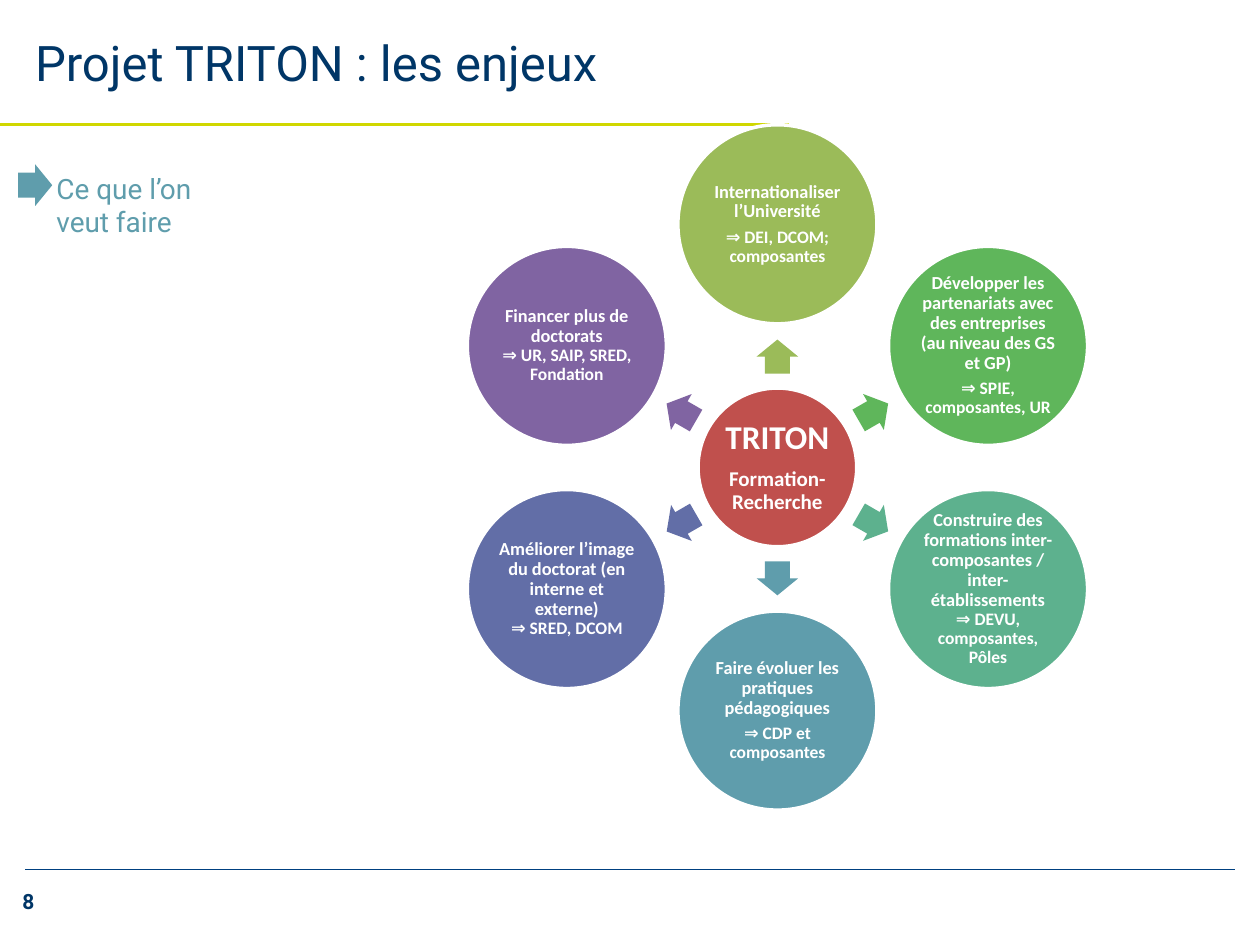
from math import cos, radians, sin

from lxml.etree import SubElement
from pptx import Presentation
from pptx.dml.color import RGBColor
from pptx.enum.shapes import MSO_CONNECTOR, MSO_SHAPE
from pptx.enum.text import MSO_ANCHOR, PP_ALIGN
from pptx.oxml.ns import qn
from pptx.util import Inches, Pt

WHITE = RGBColor(0xFF, 0xFF, 0xFF)
NAVY = RGBColor(0x00, 0x36, 0x67)
FOOTER_BLUE = RGBColor(0x00, 0x40, 0x80)
LIME = RGBColor(0xD0, 0xD7, 0x00)
RED = RGBColor(0xC0, 0x50, 0x4D)
OLIVE = RGBColor(0x9B, 0xBB, 0x59)
GREEN = RGBColor(0x5F, 0xB6, 0x5B)
MINT = RGBColor(0x5D, 0xB1, 0x8E)
TEAL = RGBColor(0x5F, 0x9D, 0xAC)
INDIGO = RGBColor(0x62, 0x6E, 0xA7)
PURPLE = RGBColor(0x80, 0x64, 0xA2)

TITLE = "Projet TRITON : les enjeux"
SUBTITLE = "Ce que l’on veut faire"
PAGE_NUMBER = "8"
HUB = [("TRITON", 19), ("Formation-Recherche", 12)]
PARAGRAPH, LINE_BREAK = "paragraph", "line break"
GOALS = [
    ("Internationaliser l’Université", PARAGRAPH, "⇒ DEI, DCOM; composantes", OLIVE),
    ("Développer les partenariats avec des entreprises (au niveau des GS et GP)",
     PARAGRAPH, "⇒ SPIE, composantes, UR", GREEN),
    ("Construire des formations inter-composantes / inter-établissements",
     LINE_BREAK, "⇒ DEVU, composantes, Pôles", MINT),
    ("Faire évoluer les pratiques pédagogiques", PARAGRAPH, "⇒ CDP et composantes", TEAL),
    ("Améliorer l’image du doctorat (en interne et externe)",
     LINE_BREAK, "⇒ SRED, DCOM", INDIGO),
    ("Financer plus de doctorats", LINE_BREAK, "⇒ UR, SAIP, SRED, Fondation", PURPLE),
]
GOAL_SIZE, ACTORS_SIZE = 10.5, 10

CENTER_X, CENTER_Y = 6.17, 3.71
HUB_DIAMETER, GOAL_DIAMETER = 1.26, 1.58
GOAL_RADIUS, ARROW_RADIUS = 1.93, 0.88
ARROW_WIDTH, ARROW_HEIGHT = 0.27, 0.33

presentation = Presentation()
presentation.slide_width, presentation.slide_height = Inches(10), Inches(7.5)
slide = presentation.slides.add_slide(presentation.slide_layouts[6])


def add_run(paragraph, text, size, font_name, color, bold=False):
    run = paragraph.add_run()
    run.text = text
    run.font.size = Pt(size)
    run.font.name = font_name
    run.font.color.rgb = color
    run.font.bold = bold


def add_rule(left, right, y, color, width):
    rule = slide.shapes.add_connector(
        MSO_CONNECTOR.STRAIGHT, Inches(left), Inches(y), Inches(right), Inches(y))
    rule.line.color.rgb = color
    rule.line.width = Pt(width)
    SubElement(rule._element.spPr, qn("a:effectLst"))


def add_label(left, top, width, height, text, size, color, bold=False, anchor=MSO_ANCHOR.TOP):
    label = slide.shapes.add_textbox(Inches(left), Inches(top), Inches(width), Inches(height))
    label.text_frame.word_wrap = True
    label.text_frame.vertical_anchor = anchor
    add_run(label.text_frame.paragraphs[0], text, size, "Roboto", color, bold)


def add_centered(kind, x, y, width, height, color):
    shape = slide.shapes.add_shape(
        kind, Inches(x - width / 2), Inches(y - height / 2), Inches(width), Inches(height))
    shape.shadow.inherit = False
    shape.fill.solid()
    shape.fill.fore_color.rgb = color
    return shape


def add_arrow(x, y, color, angle=0):
    arrow = add_centered(MSO_SHAPE.RIGHT_ARROW, x, y, ARROW_WIDTH, ARROW_HEIGHT, color)
    arrow.adjustments[0], arrow.adjustments[1] = 0.6, 0.5
    arrow.rotation = angle % 360
    arrow.line.fill.background()


def add_circle(x, y, diameter, color, paragraphs, margin):
    circle = add_centered(MSO_SHAPE.OVAL, x, y, diameter, diameter, color)
    circle.line.color.rgb = WHITE
    circle.line.width = Pt(2)
    frame = circle.text_frame
    frame.word_wrap = True
    frame.vertical_anchor = MSO_ANCHOR.MIDDLE
    frame.margin_left = frame.margin_right = Inches(margin)
    frame.margin_top = frame.margin_bottom = Inches(margin)
    for index, pieces in enumerate(paragraphs):
        paragraph = frame.add_paragraph() if index else frame.paragraphs[0]
        paragraph.alignment = PP_ALIGN.CENTER
        paragraph.line_spacing = 0.9
        paragraph.space_after = Pt(round(0.35 * pieces[0][1], 1))
        for position, (text, size) in enumerate(pieces):
            if position:
                paragraph.add_line_break()
            add_run(paragraph, text, size, "Calibri", WHITE, True)


add_rule(0.2, 9.8, 6.9, FOOTER_BLUE, 0.5)
add_rule(0, 6.26, 0.99, LIME, 2)
add_label(0.08, 7, 0.95, 0.3, PAGE_NUMBER, 12, NAVY, bold=True)
add_label(0.18, 0, 8.8, 0.99, TITLE, 28, NAVY, anchor=MSO_ANCHOR.MIDDLE)
add_label(0.35, 1.31, 1.57, 0.64, SUBTITLE, 16, TEAL)
add_arrow(0.28, 1.47, TEAL)

add_circle(CENTER_X, CENTER_Y, HUB_DIAMETER, RED, [[piece] for piece in HUB], 0.02)
for index, (goal, separator, actors, color) in enumerate(GOALS):
    angle = -90 + index * 360 / len(GOALS)
    across, down = cos(radians(angle)), sin(radians(angle))
    pieces = [(goal, GOAL_SIZE), (actors, ACTORS_SIZE)]
    paragraphs = [pieces] if separator == LINE_BREAK else [[piece] for piece in pieces]
    add_arrow(CENTER_X + ARROW_RADIUS * across, CENTER_Y + ARROW_RADIUS * down, color, angle)
    add_circle(CENTER_X + GOAL_RADIUS * across, CENTER_Y + GOAL_RADIUS * down,
               GOAL_DIAMETER, color, paragraphs, 0.01)

presentation.save("out.pptx")
